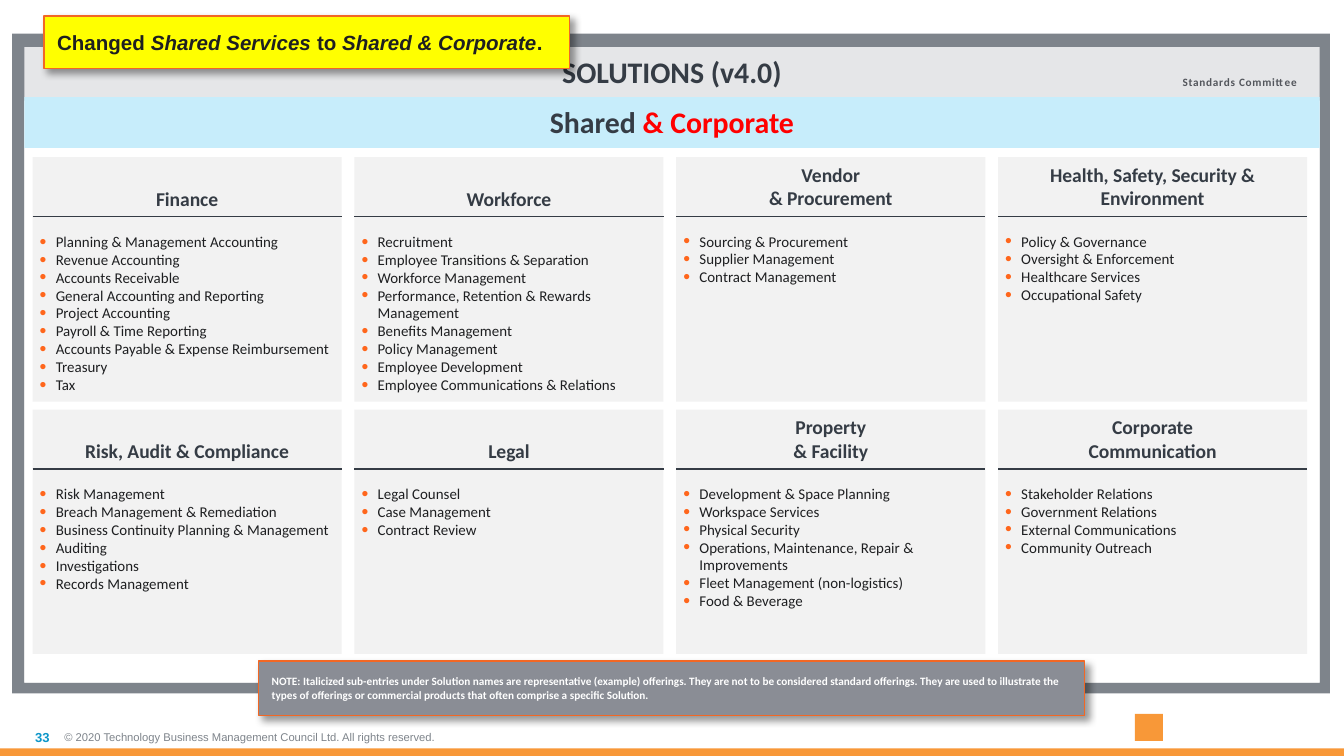
from pptx import Presentation
from pptx.dml.color import RGBColor
from pptx.enum import shapes, text
from pptx.oxml import ns
from pptx.util import Pt
from lxml import etree

SLATE = RGBColor(0x35, 0x3C, 0x45)
INK = RGBColor(0x1E, 0x1F, 0x21)
GREY = RGBColor(0x7E, 0x84, 0x8B)
NOTE_GREY = RGBColor(0x8A, 0x8D, 0x95)
LABEL_GREY = RGBColor(0x53, 0x56, 0x5C)
HEADER_GREY = RGBColor(0xE5, 0xE6, 0xE8)
CARD_GREY = RGBColor(0xF2, 0xF2, 0xF2)
WHITE = RGBColor(0xFF, 0xFF, 0xFF)
SKY = RGBColor(0xC7, 0xED, 0xFB)
BLUE = RGBColor(0x0D, 0x96, 0xC9)
RED = RGBColor(0xFF, 0x00, 0x00)
YELLOW = RGBColor(0xFF, 0xFF, 0x00)
ORANGE = RGBColor(0xF8, 0x98, 0x38)
EDGE_ORANGE = RGBColor(0xF2, 0x67, 0x24)
BULLET_ORANGE = RGBColor(0xFF, 0x66, 0x1C)

# Card grid: first corner, step and size
GRID_LEFT, GRID_TOP = 17.5, 84.2
STEP_X, STEP_Y = 172.4, 135.2
CARD_W, CARD_H = 165.6, 131
RULE_DROP = 31.8
HEADING_LINE = 12.8
ONE_LINE_MAX = 30  # longer headings wrap to a second line
COLUMNS = 4

SOLUTIONS = [
    ("Finance", [
        "Planning & Management Accounting", "Revenue Accounting",
        "Accounts Receivable", "General Accounting and Reporting",
        "Project Accounting", "Payroll & Time Reporting",
        "Accounts Payable & Expense Reimbursement", "Treasury", "Tax"]),
    ("Workforce", [
        "Recruitment", "Employee Transitions & Separation",
        "Workforce Management", "Performance, Retention & Rewards Management",
        "Benefits Management", "Policy Management", "Employee Development",
        "Employee Communications & Relations"]),
    ("Vendor\n& Procurement", [
        "Sourcing & Procurement", "Supplier Management",
        "Contract Management"]),
    ("Health, Safety, Security & Environment", [
        "Policy & Governance", "Oversight & Enforcement",
        "Healthcare Services", "Occupational Safety"]),
    ("Risk, Audit & Compliance", [
        "Risk Management", "Breach Management & Remediation",
        "Business Continuity Planning & Management", "Auditing",
        "Investigations", "Records Management"]),
    ("Legal", ["Legal Counsel", "Case Management", "Contract Review"]),
    ("Property\n& Facility", [
        "Development & Space Planning", "Workspace Services",
        "Physical Security", "Operations, Maintenance, Repair & Improvements",
        "Fleet Management (non-logistics)", "Food & Beverage"]),
    ("Corporate\nCommunication", [
        "Stakeholder Relations", "Government Relations",
        "External Communications", "Community Outreach"]),
]

NOTE = ("NOTE: Italicized sub-entries under Solution names are representative "
        "(example) offerings. They are not to be considered standard offerings. "
        "They are used to illustrate the types of offerings or commercial "
        "products that often comprise a specific Solution.")


def style_font(font, size, color, bold=False, name="Calibri"):
    font.name, font.size, font.bold = name, Pt(size), bold
    font.color.rgb = color


def set_frame(frame, margins, anchor=text.MSO_ANCHOR.TOP, wrap=True):
    frame.margin_left = frame.margin_right = Pt(margins[0])
    frame.margin_top = frame.margin_bottom = Pt(margins[1])
    frame.vertical_anchor = anchor
    frame.word_wrap = wrap
    frame.auto_size = text.MSO_AUTO_SIZE.NONE


def add_panel(slide, left, top, width, height, fill):
    panel = slide.shapes.add_shape(shapes.MSO_SHAPE.RECTANGLE, Pt(left), Pt(top),
                                   Pt(width), Pt(height))
    panel.shadow.inherit = False
    panel.fill.solid()
    panel.fill.fore_color.rgb = fill
    panel.line.fill.background()
    return panel


def add_runs(paragraph, parts, size, color, bold=True, name="Calibri"):
    runs = []
    for part in parts:
        run = paragraph.add_run()
        run.text = part
        style_font(run.font, size, color, bold, name)
        runs.append(run)
    return runs


def add_label(slide, left, top, width, height, words, size, color, bold=False,
              name="Arial", align=text.PP_ALIGN.LEFT):
    label = slide.shapes.add_textbox(Pt(left), Pt(top), Pt(width), Pt(height))
    set_frame(label.text_frame, (0, 0), text.MSO_ANCHOR.MIDDLE, wrap=False)
    paragraph = label.text_frame.paragraphs[0]
    paragraph.alignment = align
    return add_runs(paragraph, [words], size, color, bold, name)[0]


def add_callout(slide, left, top, width, height, fill):
    """Outlined box with a soft drop shadow."""
    callout = add_panel(slide, left, top, width, height, fill)
    callout.line.color.rgb = EDGE_ORANGE
    callout.line.width = Pt(0.75)
    effects = callout.element.spPr.find(ns.qn("a:effectLst"))
    shadow = etree.SubElement(effects, ns.qn("a:outerShdw"), blurRad=str(Pt(4)),
                              dist=str(Pt(3)), dir="2700000", rotWithShape="0")
    black = etree.SubElement(shadow, ns.qn("a:srgbClr"), val="000000")
    etree.SubElement(black, ns.qn("a:alpha"), val="40000")
    set_frame(callout.text_frame, (7.2, 7.2), text.MSO_ANCHOR.MIDDLE)
    paragraph = callout.text_frame.paragraphs[0]
    paragraph.alignment = text.PP_ALIGN.LEFT
    return paragraph


def add_bullet(paragraph):
    props = paragraph._p.get_or_add_pPr()
    props.set("marL", str(Pt(9.4)))
    props.set("indent", str(Pt(-8.6)))
    color = etree.SubElement(props, ns.qn("a:buClr"))
    etree.SubElement(color, ns.qn("a:srgbClr"), val=str(BULLET_ORANGE))
    etree.SubElement(props, ns.qn("a:buSzPct"), val="130000")
    etree.SubElement(props, ns.qn("a:buFont"), typeface="Arial")
    etree.SubElement(props, ns.qn("a:buChar"), char="•")


def add_card(slide, left, top, heading, offerings):
    card = add_panel(slide, left, top, CARD_W, CARD_H, CARD_GREY)
    frame = card.text_frame
    set_frame(frame, (3, 3))
    if "\n" not in heading and len(heading) <= ONE_LINE_MAX:
        frame.margin_top = Pt(3 + HEADING_LINE)  # sit on the lower line
    title = frame.paragraphs[0]
    title.text = heading
    title.alignment = text.PP_ALIGN.CENTER
    title.space_after = Pt(12)
    for run in title.runs:
        style_font(run.font, 10.5, SLATE, bold=True)
    for offering in offerings:
        item = frame.add_paragraph()
        item.level = 1
        item.alignment = text.PP_ALIGN.LEFT
        add_bullet(item)
        add_runs(item, [offering], 8, INK, bold=False)

    rule_y = Pt(top + RULE_DROP)
    rule = slide.shapes.add_connector(shapes.MSO_CONNECTOR.STRAIGHT, Pt(left), rule_y,
                                      Pt(left + CARD_W), rule_y)
    rule.line.color.rgb = SLATE
    rule.line.width = Pt(1)
    etree.SubElement(rule.element.spPr, ns.qn("a:effectLst"))


def place_title(slide):
    title = slide.shapes.title
    title.left, title.top, title.width, title.height = Pt(13), Pt(25.2), Pt(694), Pt(340.5)
    title.fill.solid()
    title.fill.fore_color.rgb = HEADER_GREY
    set_frame(title.text_frame, (7.2, 3.6))
    heading = title.text_frame.paragraphs[0]
    heading.alignment = text.PP_ALIGN.CENTER
    add_runs(heading, ["SOLUTIONS (v4.0)"], 16, SLATE)
    title.element.getparent().append(title.element)  # bring in front of the frame


def main():
    deck = Presentation()
    deck.slide_width, deck.slide_height = Pt(720), Pt(405)
    slide = deck.slides.add_slide(deck.slide_layouts[5])

    # Footer
    add_label(slide, 34.5, 384.5, 242, 21,
              "© 2020 Technology Business Management Council Ltd. All rights reserved.",
              6, GREY)
    add_label(slide, 0, 384.5, 26.6, 21, "33", 7, BLUE, bold=True,
              align=text.PP_ALIGN.RIGHT)
    add_panel(slide, 608, 382.5, 15, 14.5, ORANGE)
    add_panel(slide, 0, 401, 720, 4, ORANGE)

    # Frame and headers
    add_panel(slide, 6.5, 18, 706, 353.5, GREY)
    place_title(slide)
    add_panel(slide, 13, 54, 694, 311.7, WHITE)
    committee = add_label(slide, 633.6, 40.5, 62.6, 7.2, "Standards Committee", 6,
                          LABEL_GREY, bold=True, name="Calibri")
    committee.font._element.set("spc", "40")
    band = add_panel(slide, 13, 52, 694, 27.3, SKY)
    set_frame(band.text_frame, (7.2, 3.6))
    domain = band.text_frame.paragraphs[0]
    domain.alignment = text.PP_ALIGN.CENTER
    added_words = add_runs(domain, ["Shared ", "& Corporate"], 16, SLATE)[1]
    added_words.font.color.rgb = RED

    # Change callout and note
    change = add_callout(slide, 23.5, 8.6, 281.6, 28, YELLOW)
    parts = ["Changed ", "Shared Services ", "to ", "Shared & Corporate", "."]
    for run in add_runs(change, parts, 11, INK, name="Arial")[1::2]:
        run.font.italic = True
    note = add_callout(slide, 138.5, 354.2, 442.6, 29, NOTE_GREY)
    add_runs(note, [NOTE], 6, WHITE)

    # Solution cards
    for index, (heading, offerings) in enumerate(SOLUTIONS):
        row, column = divmod(index, COLUMNS)
        add_card(slide, GRID_LEFT + column * STEP_X, GRID_TOP + row * STEP_Y,
                 heading, offerings)

    deck.save("out.pptx")


if __name__ == "__main__":
    main()
